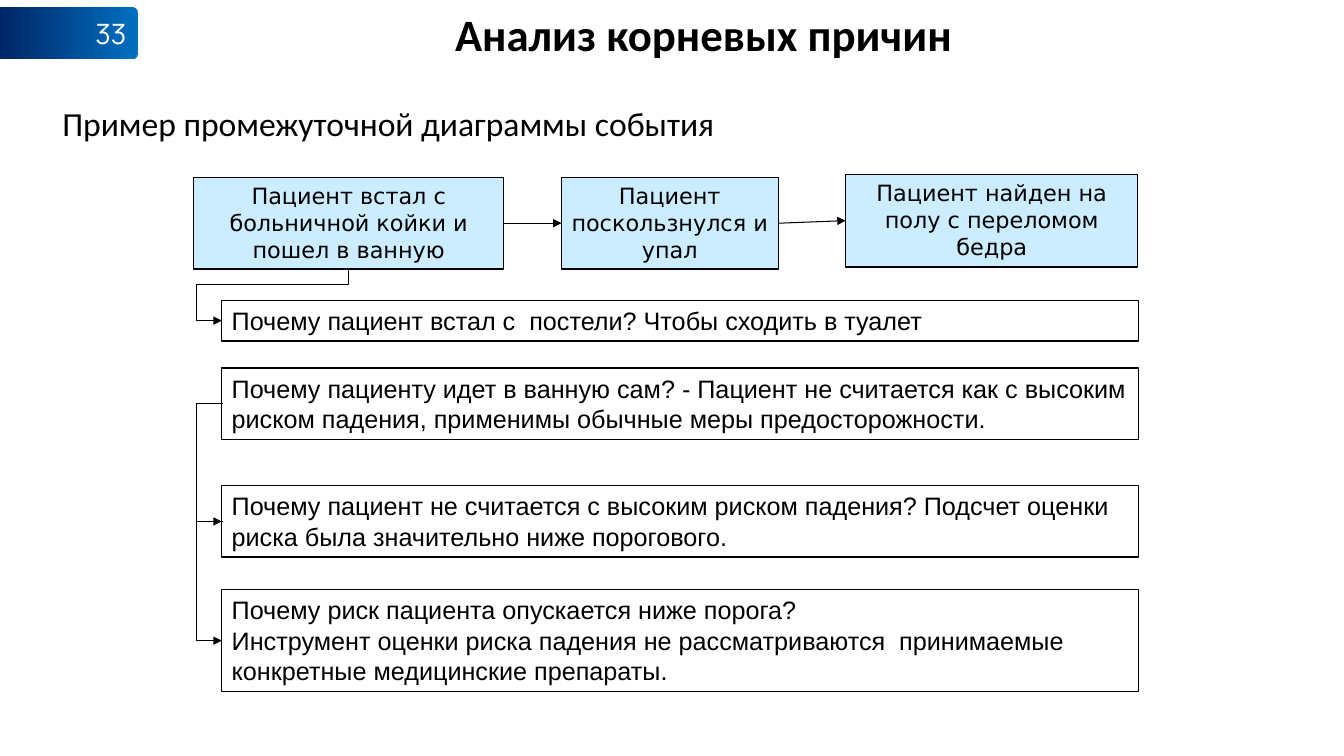
from dataclasses import dataclass

from lxml import etree
from pptx import Presentation
from pptx.dml.color import RGBColor as Color
from pptx.enum.shapes import MSO_CONNECTOR as Link, MSO_SHAPE as Shape
from pptx.enum.text import MSO_ANCHOR as Anchor, MSO_AUTO_SIZE as AutoSize, PP_ALIGN as Align
from pptx.oxml.ns import qn
from pptx.util import Cm, Pt


@dataclass(frozen=True)
class Theme:
    ink: str = "000000"
    paper: str = "FFFFFF"
    event_fill: str = "CCECFF"
    badge_light: str = "0070C0"
    badge_dark: str = "002060"
    heading_font: str = "Calibri"
    badge_font: str = "Manrope"
    event_font: str = "DejaVu Sans"
    why_font: str = "Arial"
    title_size: int = 32
    subtitle_size: int = 24
    badge_size: int = 20
    event_size: int = 16
    why_size: int = 18
    link_width: float = 0.75
    why_width: float = 1


class CauseSlide:
    def __init__(self, presentation, theme):
        self.theme = theme
        self.slide = presentation.slides.add_slide(presentation.slide_layouts[5])

    def add_text(self, shape, text, font, size, color, align=Align.LEFT, anchor=Anchor.TOP, bold=False):
        frame = shape.text_frame
        frame.word_wrap = True
        frame.auto_size = AutoSize.NONE
        frame.vertical_anchor = anchor
        paragraph = frame.paragraphs[0]
        paragraph.alignment = align
        for number, line in enumerate(text.split("\n")):
            if number:
                paragraph.add_line_break()
            run = paragraph.add_run()
            run.text = line
            run.font.name = font
            run.font.size = Pt(size)
            run.font.bold = bold
            run.font.color.rgb = Color.from_string(color)
        return paragraph

    def title(self, text, left, top, width, height):
        theme, shape = self.theme, self.slide.shapes.title
        shape.left, shape.top, shape.width, shape.height = map(Cm, (left, top, width, height))
        paragraph = self.add_text(shape, text, theme.heading_font, theme.title_size, theme.ink,
                                  Align.CENTER, Anchor.BOTTOM, bold=True)
        paragraph.line_spacing = 0.9

    def subtitle(self, text, *place):
        theme = self.theme
        shape = self.slide.shapes.add_textbox(*map(Cm, place))
        self.add_text(shape, text, theme.heading_font, theme.subtitle_size, theme.ink, Align.JUSTIFY)

    def badge(self, text, *place):
        theme = self.theme
        shape = self.slide.shapes.add_shape(Shape.ROUNDED_RECTANGLE, *map(Cm, place))
        shape.shadow.inherit = False
        shape.adjustments[0] = 0.11
        shape.line.fill.background()
        shape.fill.gradient()
        shape.fill.gradient_angle = 180
        for stop, color in zip(shape.fill.gradient_stops, (theme.badge_light, theme.badge_dark)):
            stop.color.rgb = Color.from_string(color)
        self.add_text(shape, text, theme.badge_font, theme.badge_size, theme.paper,
                      Align.RIGHT, Anchor.MIDDLE)

    def box(self, place, fill, line_width):
        shape = self.slide.shapes.add_shape(Shape.RECTANGLE, *map(Cm, place))
        shape.shadow.inherit = False
        shape.fill.solid()
        shape.fill.fore_color.rgb = Color.from_string(fill)
        shape.line.color.rgb = Color.from_string(self.theme.ink)
        shape.line.width = Pt(line_width)
        return shape

    def event(self, text, *place):
        theme = self.theme
        shape = self.box(place, theme.event_fill, theme.link_width)
        self.add_text(shape, text, theme.event_font, theme.event_size, theme.ink, Align.CENTER)
        return shape

    def why(self, text, *place):
        theme = self.theme
        shape = self.box(place, theme.paper, theme.why_width)
        self.add_text(shape, text, theme.why_font, theme.why_size, theme.ink)

    def connector(self, kind, *ends):
        connector = self.slide.shapes.add_connector(kind, *map(Cm, ends))
        connector.line.color.rgb = Color.from_string(self.theme.ink)
        connector.line.width = Pt(self.theme.link_width)
        properties = connector._element.spPr
        etree.SubElement(properties.find(qn("a:ln")), qn("a:tailEnd"), type="triangle")
        etree.SubElement(properties, qn("a:effectLst"))
        return connector

    def arrow(self, source, target):
        connector = self.connector(Link.STRAIGHT, 0, 0, 1, 1)
        connector.begin_connect(source, 3)
        connector.end_connect(target, 1)

    def bend(self, connector, preset, *adjustments):
        geometry = connector._element.spPr.find(qn("a:prstGeom"))
        geometry.set("prst", preset)
        guides = geometry.find(qn("a:avLst"))
        if guides is None:
            guides = etree.SubElement(geometry, qn("a:avLst"))
        for number, value in enumerate(adjustments, 1):
            etree.SubElement(guides, qn("a:gd"), name=f"adj{number}",
                             fmla=f"val {round(value * 100000)}")

    def side_loop(self, x, start, end, reach):
        """Leave a left edge, run down and come back to the same edge."""
        step = 0.02
        connector = self.connector(Link.ELBOW, x + step, start, x, end)
        self.bend(connector, "bentConnector3", (reach + step) / step)

    def drop_loop(self, x, y, end_x, end_y, drop, reach):
        """Drop from a bottom edge, pass the target's left edge and turn into it."""
        across, down = x - end_x, end_y - y
        middle_x, middle_y = (x + end_x) / 2, (y + end_y) / 2
        # The frame is laid out sideways, then turned by 90 degrees
        connector = self.connector(Link.ELBOW, middle_x - down / 2, middle_y - across / 2,
                                   middle_x + down / 2, middle_y + across / 2)
        connector._element.spPr.find(qn("a:xfrm")).set("rot", str(90 * 60000))
        self.bend(connector, "bentConnector4", drop / down, (across + reach) / across)


EVENTS = [
    ("Пациент встал с больничной койки и пошел в ванную", 4.88, 4.47, 7.82, 2.31),
    ("Пациент поскользнулся и упал", 14.15, 4.47, 5.46, 2.31),
    ("Пациент найден на полу с переломом бедра", 21.31, 4.39, 7.37, 2.34),
]
WHY_LEFT, WHY_WIDTH, REACH = 5.59, 23.11, 0.63
WHYS = [
    ("Почему пациент встал с  постели? Чтобы сходить в туалет", 7.57, 1.02),
    ("Почему пациенту идет в ванную сам? - Пациент не считается как с высоким риском падения, "
     "применимы обычные меры предосторожности.", 9.27, 1.8),
    ("Почему пациент не считается с высоким риском падения? Подсчет оценки риска была "
     "значительно ниже порогового.", 12.24, 1.8),
    ("Почему риск пациента опускается ниже порога?\nИнструмент оценки риска падения не "
     "рассматриваются  принимаемые конкретные медицинские препараты.", 14.86, 2.57),
]


def main():
    presentation = Presentation()
    presentation.slide_width, presentation.slide_height = Cm(33.87), Cm(19.05)
    page = CauseSlide(presentation, Theme())

    # Heading
    page.title("Анализ корневых причин", 4.17, 0.1, 27.13, 1.57)
    page.badge("33", -0.25, 0.18, 3.73, 1.32)
    page.subtitle("Пример промежуточной диаграммы события", 1.32, 2.46, 31.65, 1.27)

    # Chain of events
    events = [page.event(*event) for event in EVENTS]
    for source, target in zip(events, events[1:]):
        page.arrow(source, target)

    # Questions
    for text, top, height in WHYS:
        page.why(text, WHY_LEFT, top, WHY_WIDTH, height)

    # Links from the first event and between the later questions
    middles = [top + height / 2 for _, top, height in WHYS]
    _, left, top, width, height = EVENTS[0]
    page.drop_loop(left + width / 2, top + height, WHY_LEFT, middles[0], 0.4, REACH)
    for start, end in zip(middles[1:], middles[2:]):
        page.side_loop(WHY_LEFT, start, end, REACH)

    presentation.save("out.pptx")


if __name__ == "__main__":
    main()
